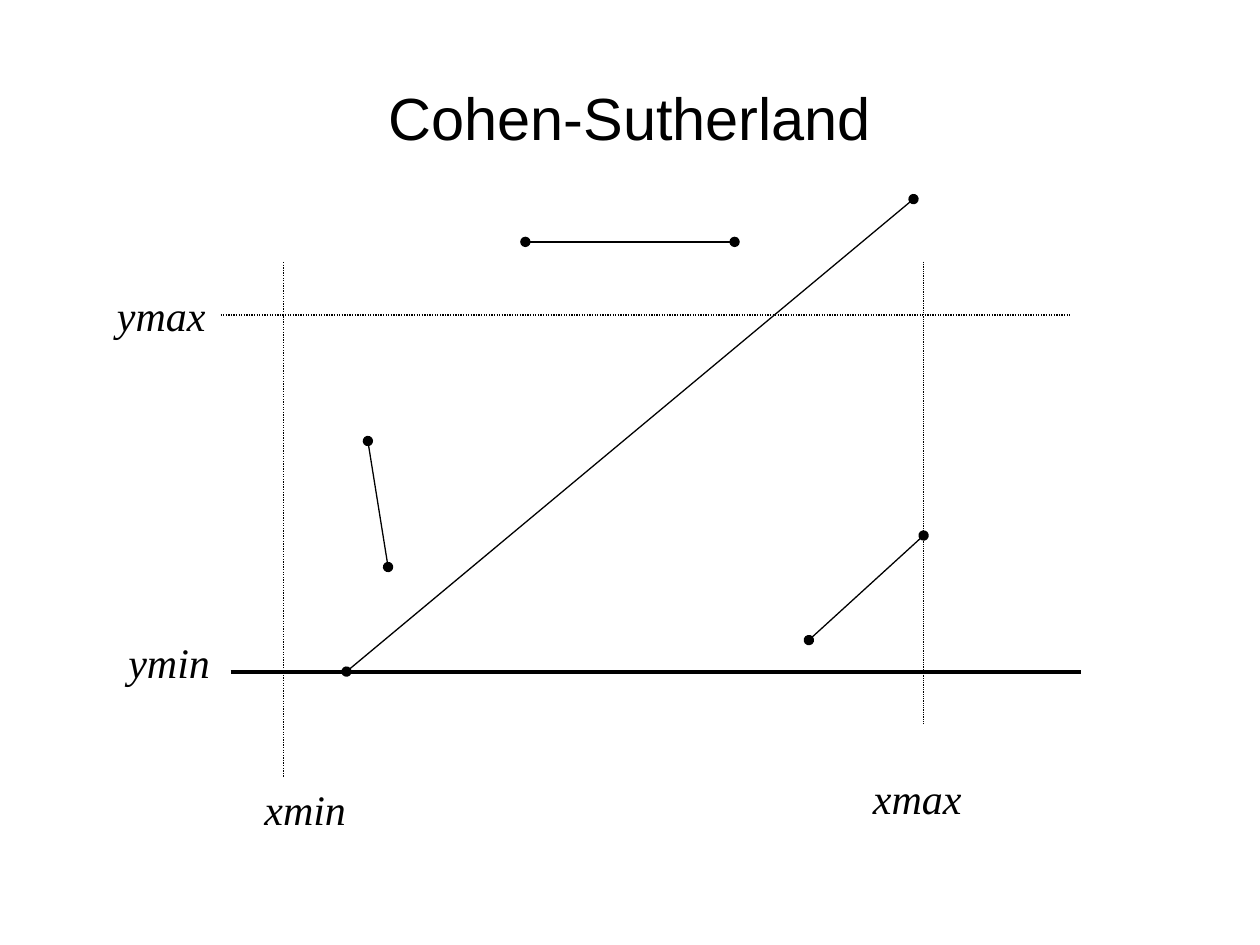
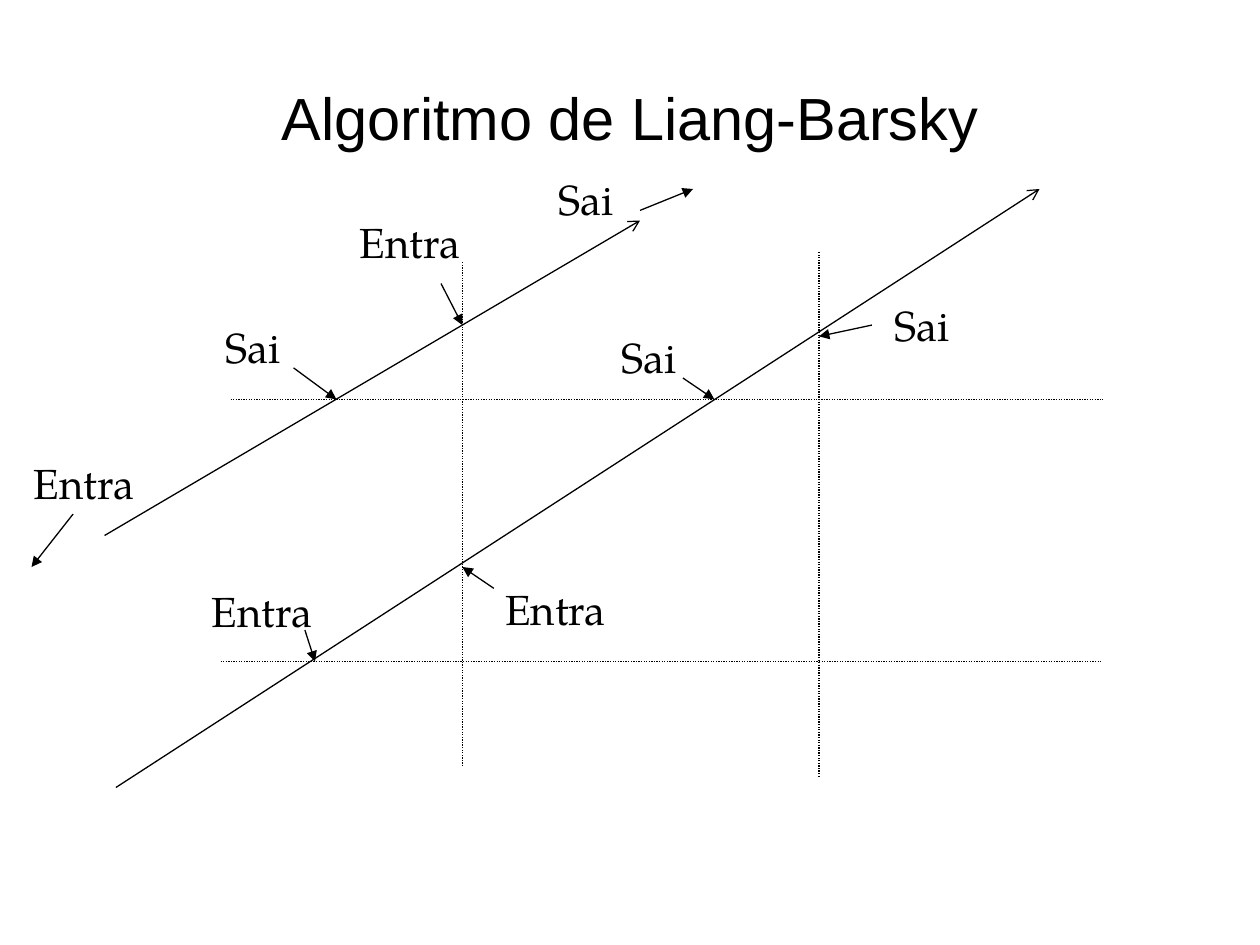
from dataclasses import dataclass

from lxml import etree
from pptx import Presentation
from pptx.dml.color import RGBColor
from pptx.enum.dml import MSO_LINE
from pptx.enum.shapes import MSO_CONNECTOR
from pptx.enum.text import MSO_ANCHOR, MSO_AUTO_SIZE, PP_ALIGN
from pptx.oxml.ns import qn
from pptx.util import Inches, Pt

STRAIGHT = MSO_CONNECTOR.STRAIGHT
DOTTED = MSO_LINE.ROUND_DOT
MIDDLE = MSO_ANCHOR.MIDDLE
LEFT, CENTER = PP_ALIGN.LEFT, PP_ALIGN.CENTER
FIT = MSO_AUTO_SIZE.SHAPE_TO_FIT_TEXT


@dataclass(frozen=True)
class Theme:
    ink: RGBColor = RGBColor(0, 0, 0)
    title_font: str = "Arial"
    axis_font: str = "Times New Roman"
    note_font: str = "TeX Gyre Pagella"
    title_size: float = 34
    label_size: float = 24
    faint: float = 0.5
    thin: float = 0.75
    thick: float = 2.25


THEME = Theme()


# Kinds of element
def add_text(slide, text, box, font, size, align=LEFT):
    frame = slide.shapes.add_textbox(*map(Inches, box)).text_frame
    para = frame.paragraphs[0]
    para.text = text
    para.alignment = align
    para.font.name = font
    para.font.size = Pt(size)
    para.font.color.rgb = THEME.ink
    return frame


def add_title(slide, text):
    frame = add_text(slide, text, (0.5, 0.3, 9, 1.25),
                     THEME.title_font, THEME.title_size, CENTER)
    frame.word_wrap = True
    frame.vertical_anchor = MIDDLE


def add_label(slide, text, left, top, width, font, align=LEFT):
    frame = add_text(slide, text, (left, top, width, 0.5),
                     font, THEME.label_size, align)
    frame.word_wrap = False
    frame.auto_size = FIT
    return frame


def add_line(slide, start, end, width=THEME.thin, dash=None,
             head=None, tail=None):
    line = slide.shapes.add_connector(
        STRAIGHT, *map(Inches, (*start, *end)))
    line.line.color.rgb = THEME.ink
    line.line.width = Pt(width)
    if dash:
        line.line.dash_style = dash
    props = line._element.spPr
    for tag, kind in (("a:headEnd", head), ("a:tailEnd", tail)):
        if kind:
            etree.SubElement(props.find(qn("a:ln")), qn(tag), type=kind)
    etree.SubElement(props, qn("a:effectLst"))


def add_row(slide, y, left, right, **style):
    add_line(slide, (left, y), (right, y), **style)


def add_col(slide, x, top, bottom, **style):
    add_line(slide, (x, top), (x, bottom), **style)


# Slide 1: segments against the clip window
def draw_cohen(slide):
    xmin, xmax, ymax, ymin = 2.25, 7.33, 2.5, 5.33
    add_title(slide, "Cohen-Sutherland")

    # Window edges
    add_row(slide, ymax, 1.75, 8.5, dash=DOTTED)
    add_col(slide, xmax, 2.08, 5.75, width=THEME.faint, dash=DOTTED)
    add_row(slide, ymin, 1.83, 8.58, width=THEME.thick)
    add_col(slide, xmin, 2.08, 6.17, dash=DOTTED)

    # Segments with round ends
    for start, end in (
        ((2.75, ymin), (7.25, 1.58)),
        ((2.92, 3.5), (3.08, 4.5)),
        ((4.17, 1.92), (5.83, 1.92)),
        ((xmax, 4.25), (6.42, 5.08)),
    ):
        add_line(slide, start, end, head="oval", tail="oval")

    # Edge names
    for text, left, top, width in (
        ("xmin", 2, 6.17, 0.85),
        ("xmax", 6.83, 6.08, 0.9),
        ("ymax", 0.83, 2.25, 0.9),
        ("ymin", 0.92, 5, 0.85),
    ):
        frame = add_label(slide, text, left, top, width, THEME.axis_font)
        frame.paragraphs[0].font.italic = True


# Slide 2: where each ray enters and leaves
def draw_liang(slide):
    xmin, xmax, ymax, ymin = 3.67, 6.5, 3.17, 5.25
    add_title(slide, "Algoritmo de Liang-Barsky")

    # Window edges
    add_col(slide, xmin, 2.08, 6.08, dash=DOTTED)
    add_col(slide, xmax, 2, 6.17, dash=DOTTED)
    add_row(slide, ymax, 1.83, 8.75, dash=DOTTED)
    add_row(slide, ymin, 1.75, 8.75, dash=DOTTED)

    # Rays
    add_line(slide, (0.92, 6.25), (8.25, 1.5), tail="arrow")
    add_line(slide, (0.83, 4.25), (5.08, 1.75), tail="arrow")

    # Notes: word, its place, and the pointer to the crossing
    widths = {"Entra": 1.01, "Sai": 0.64}
    for text, left, top, align, start, end in (
        ("Entra", 1.58, 4.6, LEFT, (2.42, 5), (2.5, ymin)),
        ("Entra", 3.91, 4.58, LEFT, (3.92, 4.67), (xmin, 4.5)),
        ("Entra", 0.17, 3.58, LEFT, (0.58, 4.08), (0.25, 4.5)),
        ("Entra", 2.75, 1.67, CENTER, (3.5, 2.25), (xmin, 2.58)),
        ("Sai", 4.33, 1.33, CENTER, (5.08, 1.67), (5.5, 1.5)),
        ("Sai", 1.69, 2.5, CENTER, (2.33, 2.92), (2.67, ymax)),
        ("Sai", 4.83, 2.58, CENTER, (5.42, 3), (5.67, ymax)),
        ("Sai", 7, 2.33, CENTER, (6.92, 2.58), (xmax, 2.67)),
    ):
        add_line(slide, start, end, tail="triangle")
        add_label(slide, text, left, top, widths[text],
                  THEME.note_font, align)


def main():
    deck = Presentation()
    deck.slide_width, deck.slide_height = Inches(10), Inches(7.5)
    blank = deck.slide_layouts[6]
    for draw in (draw_cohen, draw_liang):
        draw(deck.slides.add_slide(blank))
    deck.save("out.pptx")


if __name__ == "__main__":
    main()
